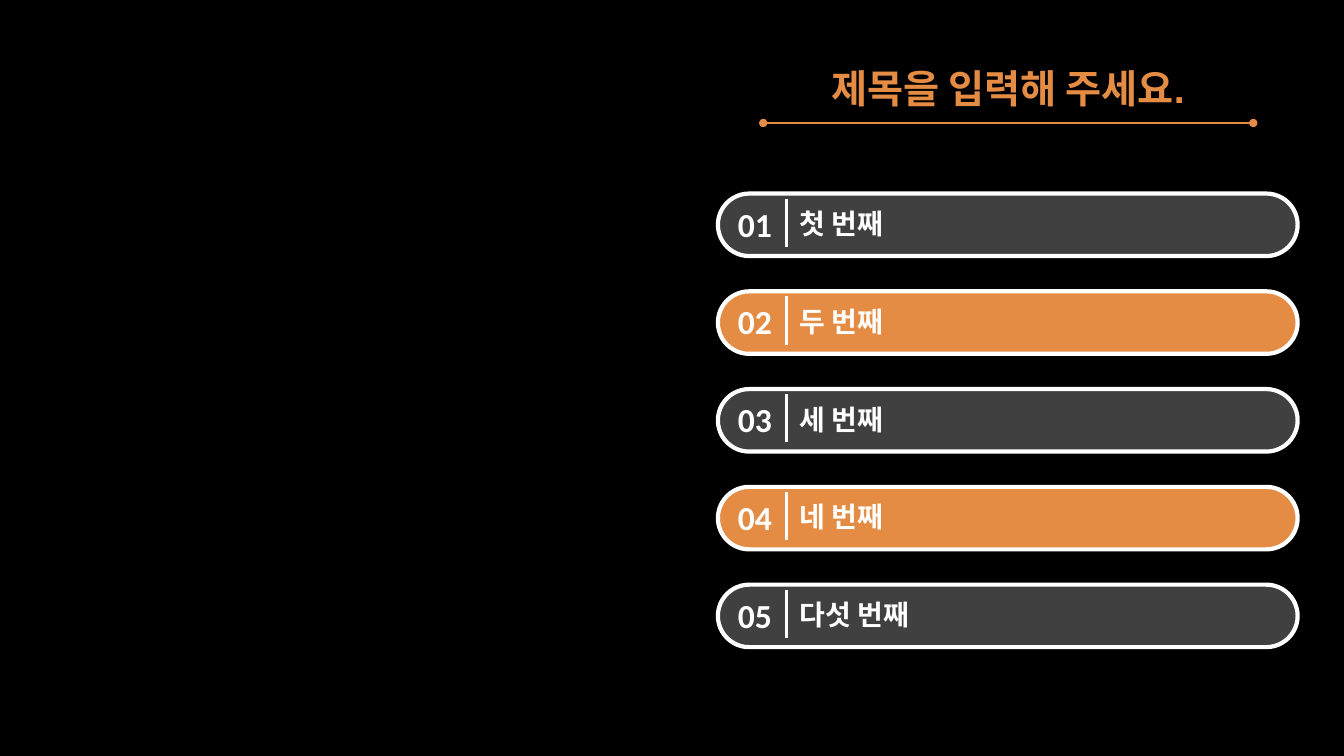
import pptx
import pptx.util
import pptx.dml.color
import pptx.enum.shapes
import pptx.enum.text
import pptx.oxml
import pptx.oxml.ns

Inches = pptx.util.Inches
Pt = pptx.util.Pt
Shape = pptx.enum.shapes.MSO_SHAPE
Align = pptx.enum.text.PP_ALIGN
Anchor = pptx.enum.text.MSO_ANCHOR
Fit = pptx.enum.text.MSO_AUTO_SIZE

BLACK, WHITE, GRAY, ORANGE = "000000", "FFFFFF", "404040", "E48C44"
ITEMS = ["첫 번째", "두 번째", "세 번째", "네 번째", "다섯 번째"]


def paint(color, code):
    color.rgb = pptx.dml.color.RGBColor.from_string(code)


def fill(target, code):
    target.solid()
    paint(target.fore_color, code)


def write(shape, text, size, font, code, align=Align.LEFT, wrap=True):
    frame = shape.text_frame
    frame.word_wrap = wrap
    frame.auto_size = Fit.SHAPE_TO_FIT_TEXT
    frame.vertical_anchor = Anchor.TOP
    para = frame.paragraphs[0]
    para.alignment = align
    run = para.add_run()
    run.text = text
    run.font.size = Pt(size)
    run.font.name = font
    run.font.bold = True
    paint(run.font.color, code)


def label(shapes, box, text, size, wrap=True):
    shape = shapes.add_textbox(*map(Inches, box))
    write(shape, text, size, "Calibri", WHITE, wrap=wrap)


def rule(shapes, start, end, code, width, dots=False):
    line = shapes.add_connector(
        pptx.enum.shapes.MSO_CONNECTOR.STRAIGHT, *map(Inches, start + end))
    paint(line.line.color, code)
    line.line.width = Pt(width)
    props = line.element.spPr
    if dots:
        outline = line.line._get_or_add_ln()
        for tag in ("a:headEnd", "a:tailEnd"):
            outline.append(pptx.oxml.parse_xml(
                f'<{tag} {pptx.oxml.ns.nsdecls("a")} type="oval"/>'))
    props.append(pptx.oxml.parse_xml(
        f'<a:effectLst {pptx.oxml.ns.nsdecls("a")}/>'))


def head(slide, left, top, width):
    # Title with a dotted-end rule below it
    title = slide.shapes.title
    inset = 0.04
    title.left, title.top = Inches(left + inset), Inches(top)
    title.width, title.height = Inches(width - 2 * inset), Inches(0.57)
    write(title, "제목을 입력해 주세요.", 28, "Arial", ORANGE, Align.CENTER)
    low = top + 0.63
    rule(slide.shapes, (left, low), (left + width, low), ORANGE, 1.75, True)


def bar(shapes, left, top, width, height, num, text, code):
    # Pill
    pill = shapes.add_shape(Shape.ROUNDED_RECTANGLE,
                            *map(Inches, (left, top, width, height)))
    pill.adjustments[0] = 0.5
    pill.shadow.inherit = False
    fill(pill.fill, code)
    paint(pill.line.color, WHITE)
    pill.line.width = Pt(3)
    # Caption, number and divider
    label(shapes, (left + 0.71, top + 0.08, 4.34, 0.46), text, 20)
    label(shapes, (left + 0.1, top + 0.05, 0.57, 0.53), f"{num:02}", 24, False)
    mid = left + 0.68
    rule(shapes, (mid, top + 0.05), (mid, top + 0.53), WHITE, 2.25)


def menu(shapes, left, top, width):
    # Bars at an even pitch, in alternating colours
    for i, text in enumerate(ITEMS):
        code = ORANGE if i % 2 else GRAY
        bar(shapes, left, top + 0.97 * i, width, 0.62, i + 1, text, code)


def main():
    deck = pptx.Presentation()
    deck.slide_width, deck.slide_height = Inches(13.33), Inches(7.5)
    slide = deck.slides.add_slide(deck.slide_layouts[5])
    fill(slide.background.fill, BLACK)
    head(slide, 7.57, 0.59, 4.86)
    menu(slide.shapes, 7.12, 1.92, 5.75)
    deck.save("out.pptx")


if __name__ == "__main__":
    main()
